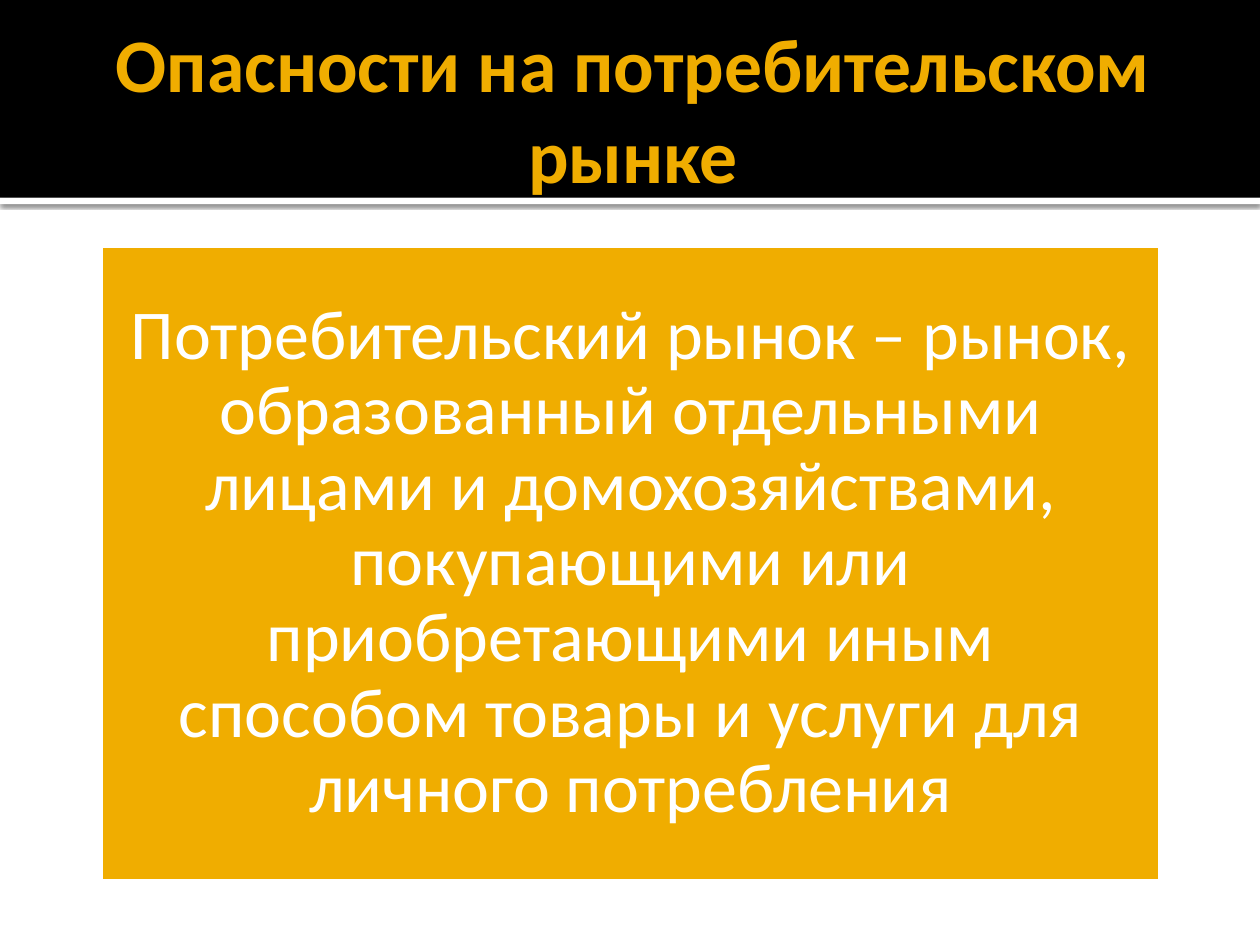
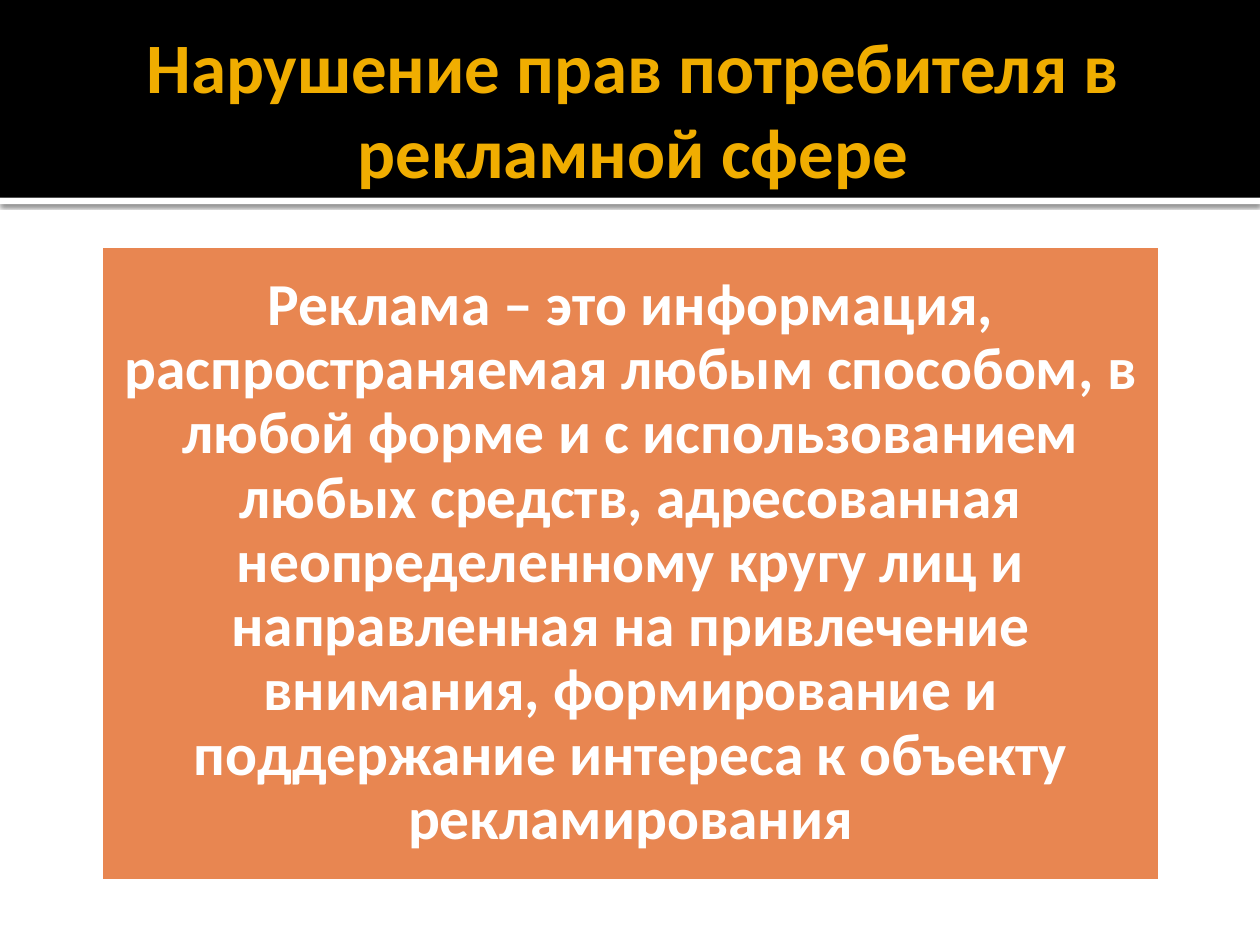
from dataclasses import dataclass

from lxml.etree import SubElement
from pptx import Presentation
from pptx.dml.color import RGBColor
from pptx.enum.shapes import MSO_SHAPE
from pptx.enum.text import MSO_ANCHOR, MSO_AUTO_SIZE, PP_ALIGN
from pptx.oxml.ns import qn
from pptx.shapes.autoshape import Shape
from pptx.slide import Slide, SlideLayout
from pptx.text.text import TextFrame
from pptx.util import Inches, Pt


@dataclass(frozen=True)
class Theme:
    font: str = "Calibri"
    black: str = "000000"
    white: str = "FFFFFF"
    amber: str = "F0AD00"
    orange: str = "E88651"
    title_large: float = 43.2
    title_small: float = 40.5
    body_large: float = 40
    body_small: float = 34
    card_line: float = 3.78


THEME = Theme()


@dataclass(frozen=True)
class Box:
    left: float
    top: float
    width: float
    height: float

    def place(self, sp: Shape) -> None:
        sp.left, sp.top = Inches(self.left), Inches(self.top)
        sp.width, sp.height = Inches(self.width), Inches(self.height)


@dataclass(frozen=True)
class TextStyle:
    size: float
    color: str
    bold: bool
    insets: tuple[float, float, float, float]
    line_spacing: float = 1.0


@dataclass(frozen=True)
class Definition:
    title: str
    title_size: float
    text: str
    text_size: float
    bold: bool
    inset: float
    fill: str


HEADER = Box(0, 0, 10, 1.57)
STRIP = Box(0, 1.57, 10, 0.05)
TITLE = Box(0.5, 0.17, 9, 1.37)
CARD = Box(0.79, 1.94, 8.43, 5.06)

DEFINITIONS = [
    Definition(
        "Опасности на потребительском рынке", THEME.title_large,
        "Потребительский рынок – рынок, образованный отдельными лицами и "
        "домохозяйствами, покупающими или приобретающими иным способом "
        "товары и услуги для личного потребления",
        THEME.body_large, False, 0.17, THEME.amber,
    ),
    Definition(
        "Нарушение прав потребителя в рекламной сфере", THEME.title_small,
        "Реклама – это информация, распространяемая любым способом, в любой "
        "форме и с использованием любых средств, адресованная "
        "неопределенному кругу лиц и направленная на привлечение внимания, "
        "формирование и поддержание интереса к объекту рекламирования",
        THEME.body_small, True, 0.14, THEME.orange,
    ),
]


def add_rect(s: Slide, box: Box, fill: str) -> Shape:
    sp = s.shapes.add_shape(MSO_SHAPE.RECTANGLE, 0, 0, 0, 0)
    box.place(sp)
    sp.shadow.inherit = False
    sp.fill.solid()
    sp.fill.fore_color.rgb = RGBColor.from_string(fill)
    sp.line.fill.background()
    return sp


def add_shadow(sp: Shape) -> None:
    effects = sp.element.spPr.find(qn("a:effectLst"))
    shadow = SubElement(effects, qn("a:outerShdw"), blurRad=str(Pt(2.5)),
                        dist=str(Pt(0.8)), dir="5400000", rotWithShape="0")
    color = SubElement(shadow, qn("a:srgbClr"), val=THEME.black)
    SubElement(color, qn("a:alpha"), val="60000")


def write(tf: TextFrame, text: str, style: TextStyle) -> None:
    tf.word_wrap = True
    tf.auto_size = MSO_AUTO_SIZE.NONE
    tf.vertical_anchor = MSO_ANCHOR.MIDDLE
    tf.margin_left, tf.margin_top, tf.margin_right, tf.margin_bottom = map(
        Inches, style.insets)
    p = tf.paragraphs[0]
    p.alignment = PP_ALIGN.CENTER
    p.line_spacing = style.line_spacing
    r = p.add_run()
    r.text = text
    r.font.name = THEME.font
    r.font.size = Pt(style.size)
    r.font.bold = style.bold
    r.font.color.rgb = RGBColor.from_string(style.color)


def move_bands_to_layout(s: Slide, layout: SlideLayout) -> None:
    strip = add_rect(s, STRIP, THEME.white)
    add_shadow(strip)
    header = add_rect(s, HEADER, THEME.black)
    for index, sp in enumerate((strip, header), start=2):
        layout.shapes.element.insert(index, sp.element)


def fill_slide(s: Slide, item: Definition) -> None:
    title = s.shapes.title
    TITLE.place(title)
    write(title.text_frame, item.title,
          TextStyle(item.title_size, THEME.amber, True, (0.1, 0.05, 0.05, 0.05)))
    card = add_rect(s, CARD, item.fill)
    card.line.color.rgb = RGBColor.from_string(THEME.white)
    card.line.width = Pt(THEME.card_line)
    write(card.text_frame, item.text,
          TextStyle(item.text_size, THEME.white, item.bold, (item.inset,) * 4, 0.9))


def main() -> None:
    prs = Presentation()
    prs.slide_width, prs.slide_height = Inches(10), Inches(7.5)
    layout = prs.slide_layouts.get_by_name("Title Only")
    slides = [prs.slides.add_slide(layout) for _ in DEFINITIONS]
    move_bands_to_layout(slides[0], layout)
    for s, item in zip(slides, DEFINITIONS):
        fill_slide(s, item)
    prs.save("out.pptx")


if __name__ == "__main__":
    main()
